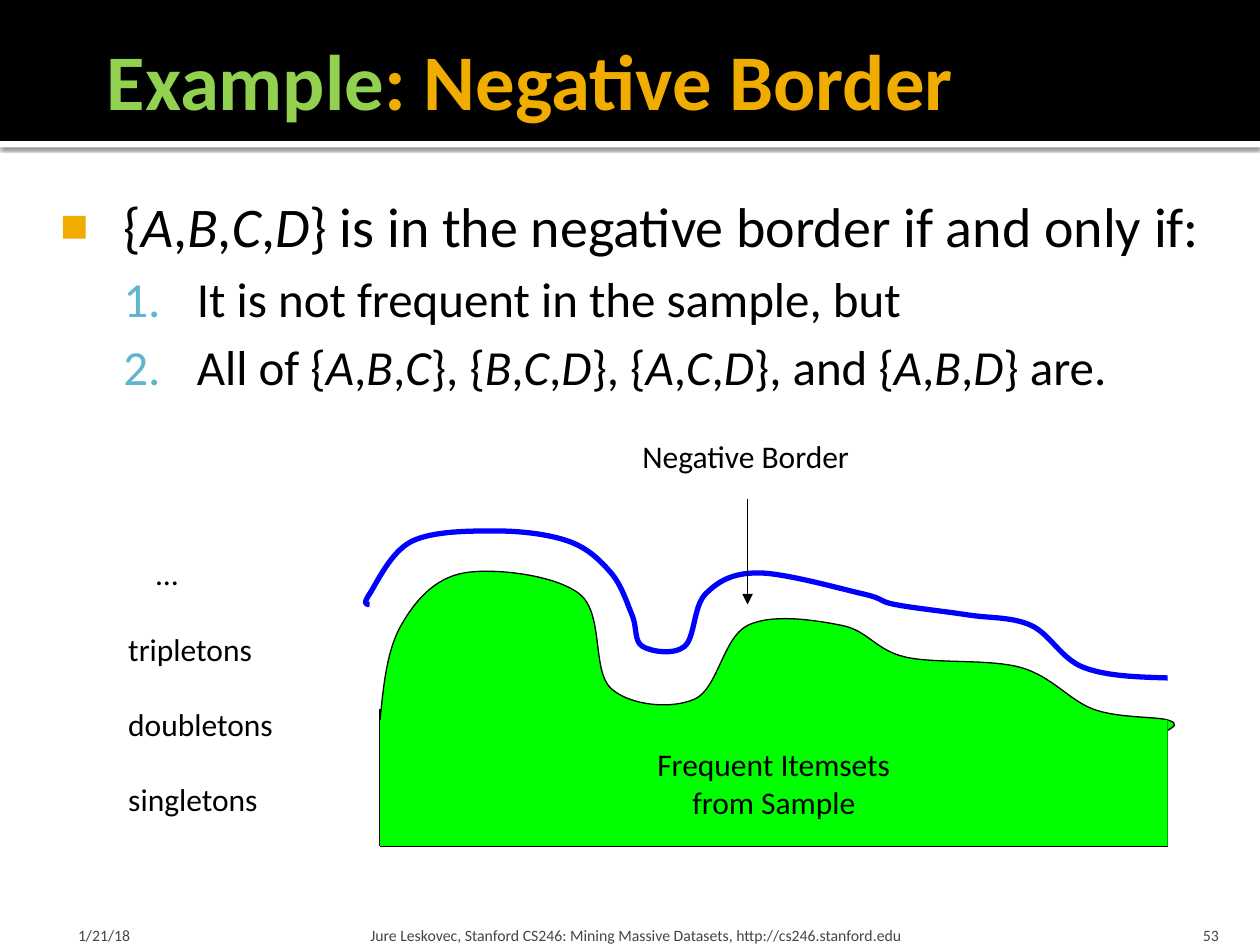
"""Build the negative border example slide."""
from lxml import etree
from pptx import Presentation
from pptx.dml.color import RGBColor
from pptx.enum.shapes import MSO_CONNECTOR, MSO_SHAPE
from pptx.enum.text import MSO_ANCHOR, PP_ALIGN
from pptx.oxml.ns import qn
from pptx.util import Pt

RECT, LINE = MSO_SHAPE.RECTANGLE, MSO_CONNECTOR.STRAIGHT
TOP, MID, LOW = MSO_ANCHOR.TOP, MSO_ANCHOR.MIDDLE, MSO_ANCHOR.BOTTOM
LEFT, MIDX, RIGHT = PP_ALIGN.LEFT, PP_ALIGN.CENTER, PP_ALIGN.RIGHT
FONT = "Calibri"
HEX = {"black": "000000", "white": "FFFFFF", "gold": "F0AD00", "lime": "92D050",
       "sky": "60B5CC", "grey": "454545", "green": "00FF00", "blue": "0000FF"}

TITLE = [("Example", "lime"), (": Negative Border", "gold")]
BODY = [
    ("{_A_,_B_,_C_,_D_} is in the negative border if and only if:", 32, 36, -36, "■", "gold"),
    ("It is not frequent in the sample, but", 28, 78, -42, None, "sky"),
    ("All of {_A_,_B_,_C_}, {_B_,_C_,_D_}, {_A_,_C_,_D_}, and {_A_,_B_,_D_} are.",
     28, 78, -42, None, "sky"),
]
SIZES = ["…", "tripletons", "doubletons", "singletons"]
FOOT = [
    ("1/21/18", (36, 518.4, 168, 21.6), 8.6, LEFT),
    ("Jure Leskovec, Stanford CS246: Mining Massive Datasets, http://cs246.stanford.edu",
     (208, 518.4, 433.5, 21.6), 3.6, LEFT),
    ("53", (646, 518.4, 57.6, 21.6), 7.2, RIGHT),
]
ORIGIN = (217.2, 411.4)
WIDE, HIGH = 450, 72
FREQUENT = [(0, 0), (12, -54), (48, -84), (114, -72), (132, -18), (180, -12), (210, -54),
            (264, -54), (300, -36), (366, -30), (408, -6), (450, 0), (450, 6)]
BORDER = [(-6, -66), (-6, -72), (18, -102), (66, -108), (108, -102), (132, -84), (144, -60),
          (150, -42), (174, -42), (186, -72), (216, -84), (276, -72), (294, -66), (336, -60),
          (372, -54), (402, -30), (450, -24)]
EDGES = [((0, HIGH), (WIDE, HIGH)), ((0, HIGH), (0, -6)), ((WIDE, 0), (WIDE, HIGH))]
ARROW = ((210, -126), (210, -66))

deck = Presentation()
deck.slide_width, deck.slide_height = Pt(720), Pt(540)
slide = deck.slides.add_slide(deck.slide_layouts[6])
shapes = slide.shapes


def tint(name):
    return RGBColor.from_string(HEX[name])


def sub(parent, tag, **attrs):
    return etree.SubElement(parent, qn(tag), {k: str(v) for k, v in attrs.items()})


def style(run, size, color="black"):
    run.font.name, run.font.size = FONT, Pt(size)
    run.font.color.rgb = tint(color)


def setup(frame, anchor=TOP, pads=(7.2, 3.6, 7.2, 3.6)):
    frame.word_wrap, frame.vertical_anchor = True, anchor
    (frame.margin_left, frame.margin_top,
     frame.margin_right, frame.margin_bottom) = map(Pt, pads)
    return frame


def write(frame, lines, size, color="black", align=LEFT, gap=0):
    frame.text = "\n".join(lines)
    for i, para in enumerate(frame.paragraphs):
        para.alignment = align
        para.space_before = Pt(gap if i else 0)
        for run in para.runs:
            style(run, size, color)


def box(at, anchor=TOP, pads=(7.2, 3.6, 7.2, 3.6)):
    return setup(shapes.add_textbox(*map(Pt, at)).text_frame, anchor, pads)


def block(at, color):
    shape = shapes.add_shape(RECT, *map(Pt, at))
    shape.shadow.inherit = False
    shape.fill.solid()
    shape.fill.fore_color.rgb = tint(color)
    shape.line.fill.background()
    return shape


def place(point):
    return tuple(Pt(a + b) for a, b in zip(ORIGIN, point))


def blend(a, b, c, d, part):
    return tuple(p + (s - r) * part for p, r, s in zip(a, c, d))


def smooth(knots):
    """Return the start, then two handles and an end for each span."""
    last = len(knots) - 2
    dots = [knots[0]]
    for i, (a, b) in enumerate(zip(knots, knots[1:])):
        out = blend(a, b, knots[max(i - 1, 0)], b, 1 / 6)
        back = blend(b, a, a, knots[min(i + 2, last + 1)], -1 / 6)
        if i == 0:
            out = blend(a, b, a, back, 0.5)
        if i == last:
            back = blend(b, a, b, out, 0.5)
        dots += [out, back, b]
    return [place(dot) for dot in dots]


def curve(knots, color, width, fill=None):
    dots = smooth(knots)
    build = shapes.build_freeform(*dots[0], scale=1.0)
    build.add_line_segments(dots[1:], close=False)
    shape = build.convert_to_shape()
    track = next(shape._element.iter(qn("a:path")))
    legs = track.findall(qn("a:lnTo"))
    for i in range(0, len(legs), 3):
        bend = sub(track, "a:cubicBezTo")
        for leg in legs[i:i + 3]:
            bend.append(leg[0])
            track.remove(leg)
    shape.shadow.inherit = False
    if fill:
        shape.fill.solid()
        shape.fill.fore_color.rgb = tint(fill)
    else:
        shape.fill.background()
    shape.line.color.rgb, shape.line.width = tint(color), Pt(width)


def rule(start, end, head=False):
    line = shapes.add_connector(LINE, *place(start), *place(end))
    line.line.color.rgb, line.line.width = tint("black"), Pt(0.75)
    if head:
        sub(line._element.spPr.find(qn("a:ln")), "a:tailEnd", type="triangle")
    sub(line._element.spPr, "a:effectLst")


def bullet(para, left, hang, mark, color):
    props = para._p.get_or_add_pPr()
    props.set("marL", str(Pt(left)))
    props.set("indent", str(Pt(hang)))
    sub(sub(props, "a:buClr"), "a:srgbClr", val=HEX[color])
    if mark:
        sub(props, "a:buSzPct", val=53000)
    sub(props, "a:buFont", typeface=FONT)
    if mark:
        sub(props, "a:buChar", char=mark)
    else:
        sub(props, "a:buAutoNum", type="arabicPeriod")


strip = block((0, 80.6, 720, 3.6), "white")
glow = sub(strip._element.spPr.find(qn("a:effectLst")), "a:outerShdw",
           blurRad=Pt(2.5), dist=Pt(0.8), dir=5400000, algn="t", rotWithShape=0)
sub(sub(glow, "a:srgbClr", val=HEX["black"]), "a:alpha", val=60000)
block((0, 0, 720, 80.6), "black")

for text, at, pad, align in FOOT:
    write(box(at, LOW, (pad, 3.6, pad, 0)), [text], 9, "grey", align)

head = box((54, 0, 612, 90), MID, (7.2, 3.6, 3.6, 3.6)).paragraphs[0]
for text, color in TITLE:
    run = head.add_run()
    run.text = text
    style(run, 45, color)
    run.font.bold = True

body = box((30.2, 102.2, 678.2, 437.8), TOP, (4.3, 7.2, 7.2, 3.6))
for i, (text, size, left, hang, mark, color) in enumerate(BODY):
    para = body.add_paragraph() if i else body.paragraphs[0]
    para.level = min(i, 1)
    para.space_before = Pt(5.5 if i else 0)
    bullet(para, left, hang, mark, color)
    for n, part in enumerate(text.split("_")):
        run = para.add_run()
        run.text = part
        style(run, size)
        run.font.italic = n % 2 == 1

sizes = box((66.2, 313.2, 130.3, 208.8))
write(sizes, SIZES, 18, gap=21.5)
sizes.paragraphs[0]._p.get_or_add_pPr().set("marL", str(Pt(16)))

curve(FREQUENT, "black", 0.75, "green")
curve(BORDER, "blue", 3)
write(box((360, 246.2, 185, 36)), ["Negative Border"], 18)
rule(*ARROW, head=True)
for edge in EDGES:
    rule(*edge)
base = block((*ORIGIN, WIDE, HIGH), "green")
write(setup(base.text_frame, MID), ["Frequent Itemsets", "from Sample"], 18, align=MIDX)

deck.save("out.pptx")
